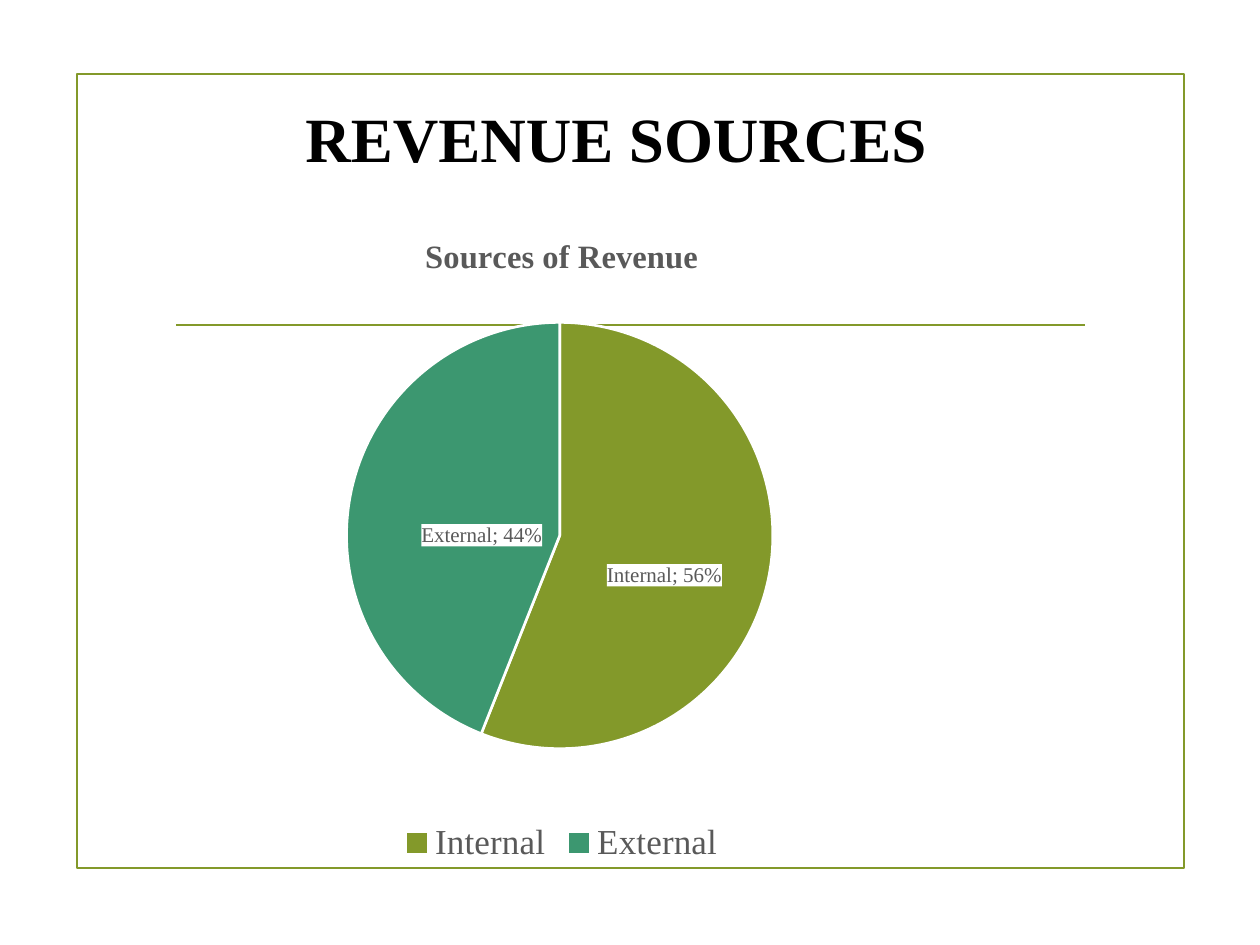
from dataclasses import dataclass

from lxml import etree
from pptx import Presentation
from pptx.chart.data import CategoryChartData
from pptx.dml.color import RGBColor
from pptx.enum.chart import XL_CHART_TYPE, XL_LABEL_POSITION, XL_LEGEND_POSITION
from pptx.enum.shapes import MSO_CONNECTOR, MSO_SHAPE
from pptx.enum.text import MSO_ANCHOR, PP_ALIGN
from pptx.oxml import parse_xml
from pptx.oxml.ns import qn
from pptx.util import Inches, Pt

PIE = XL_CHART_TYPE.PIE
LABEL_CENTER = XL_LABEL_POSITION.CENTER
LEGEND_BOTTOM = XL_LEGEND_POSITION.BOTTOM
STRAIGHT = MSO_CONNECTOR.STRAIGHT
RECTANGLE = MSO_SHAPE.RECTANGLE
MIDDLE = MSO_ANCHOR.MIDDLE
CENTER = PP_ALIGN.CENTER

CHART_NS = "http://schemas.openxmlformats.org/drawingml/2006/chart"
DRAWING_NS = "http://schemas.openxmlformats.org/drawingml/2006/main"


@dataclass(frozen=True)
class Theme:
    """Colours, font and type sizes of the slide."""
    font: str = "Times New Roman"
    olive: RGBColor = RGBColor(0x83, 0x99, 0x2A)
    green: RGBColor = RGBColor(0x3C, 0x97, 0x70)
    black: RGBColor = RGBColor(0, 0, 0)
    gray: RGBColor = RGBColor(0x59, 0x59, 0x59)
    white: RGBColor = RGBColor(0xFF, 0xFF, 0xFF)
    heading: float = 36
    chart_title: float = 18.6
    legend: float = 20
    label: float = 12
    chart: float = 10
    line: float = 1.25


THEME = Theme()


def style_font(font, size, color, bold=False):
    """Give a font the theme typeface with a size, colour and weight."""
    font.name = THEME.font
    font.size = Pt(size)
    font.bold = bold
    font.color.rgb = color


def style_line(line, color, width):
    """Give a line its colour and width."""
    line.color.rgb = color
    line.width = Pt(width)


def add_frame(slide, left, top, width, height):
    """Draw the outlined border of the slide."""
    frame = slide.shapes.add_shape(
        RECTANGLE, Inches(left), Inches(top), Inches(width), Inches(height))
    frame.shadow.inherit = False
    frame.fill.background()
    style_line(frame.line, THEME.olive, THEME.line)


def add_rule(slide, left, right, y):
    """Draw the horizontal rule."""
    rule = slide.shapes.add_connector(
        STRAIGHT, Inches(left), Inches(y), Inches(right), Inches(y))
    style_line(rule.line, THEME.olive, THEME.line)
    etree.SubElement(rule._element.spPr, qn("a:effectLst"))


def add_heading(slide, text, left, top, width, height):
    """Write the centred slide heading."""
    heading = slide.shapes.add_textbox(
        Inches(left), Inches(top), Inches(width), Inches(height))
    frame = heading.text_frame
    frame.word_wrap = True
    frame.vertical_anchor = MIDDLE
    paragraph = frame.paragraphs[0]
    paragraph.text = text
    paragraph.alignment = CENTER
    style_font(paragraph.font, THEME.heading, THEME.black, bold=True)


def manual_layout(**settings):
    """Build a chart layout element from its settings in schema order."""
    entries = "".join(f'<c:{key} val="{value}"/>' for key, value in settings.items())
    return parse_xml(f'<c:layout xmlns:c="{CHART_NS}"><c:manualLayout>'
                     f'{entries}</c:manualLayout></c:layout>')


def style_slice(point, color, label_shift):
    """Colour one slice and label it with its category and percentage."""
    point.format.fill.solid()
    point.format.fill.fore_color.rgb = color
    style_line(point.format.line, THEME.white, 1.5)
    label = point.data_label
    style_font(label.font, THEME.label, THEME.gray)
    label.position = LABEL_CENTER
    element = label._get_or_add_dLbl()
    for flag, shown in (("showVal", 0), ("showCatName", 1), ("showPercent", 1)):
        element.find(qn(f"c:{flag}")).set("val", str(shown))
    shift_x, shift_y = label_shift
    element.find(qn("c:idx")).addnext(manual_layout(x=shift_x, y=shift_y))
    element.find(qn("c:txPr")).addprevious(parse_xml(
        f'<c:spPr xmlns:c="{CHART_NS}" xmlns:a="{DRAWING_NS}"><a:solidFill>'
        f'<a:srgbClr val="{THEME.white}"/></a:solidFill></c:spPr>'))
    etree.SubElement(element, qn("c:separator")).text = "; "


def place_plot(chart, x, y, width, height):
    """Fix the inner plot area as fractions of the chart."""
    plot_area = chart._chartSpace.chart.plotArea
    for layout in plot_area.findall(qn("c:layout")):
        plot_area.remove(layout)
    plot_area.insert(0, manual_layout(
        layoutTarget="inner", xMode="edge", yMode="edge", x=x, y=y, w=width, h=height))


def add_revenue_pie(slide, title, slices, left, top, width, height):
    """Add the pie chart with its title, legend and labelled slices."""
    data = CategoryChartData()
    data.categories = [name for name, *_ in slices]
    data.add_series(title, [share for _, share, *_ in slices])
    chart = slide.shapes.add_chart(
        PIE, Inches(left), Inches(top), Inches(width), Inches(height), data).chart
    style_font(chart.font, THEME.chart, THEME.black)
    chart.has_title = True
    heading = chart.chart_title.text_frame.paragraphs[0]
    heading.text = title
    style_font(heading.font, THEME.chart_title, THEME.gray, bold=True)
    chart.chart_title.include_in_layout = False
    chart.has_legend = True
    chart.legend.position = LEGEND_BOTTOM
    chart.legend.include_in_layout = False
    style_font(chart.legend.font, THEME.legend, THEME.gray)
    pie = chart.plots[0]
    pie.vary_by_categories = True
    for index, (_, _, color, label_shift) in enumerate(slices):
        style_slice(pie.series[0].points[index], color, label_shift)
    place_plot(chart, 0.135, 0.17, 0.725, 0.647)


def main():
    """Build and save the revenue slide."""
    deck = Presentation()
    deck.slide_width, deck.slide_height = Inches(10), Inches(7.5)
    slide = deck.slides.add_slide(deck.slide_layouts[6])
    add_frame(slide, 0.61, 0.59, 8.79, 6.3)
    add_rule(slide, 1.4, 8.61, 2.58)
    add_heading(slide, "REVENUE SOURCES", 1.17, 0.75, 7.44, 0.68)
    slices = [("Internal", 56, THEME.olive, (0, 0.03)),
              ("External", 44, THEME.green, (0.03, 0.03))]
    add_revenue_pie(slide, "Sources of Revenue", slices, 0.92, 1.67, 7.08, 5.23)
    deck.save("out.pptx")


if __name__ == "__main__":
    main()
